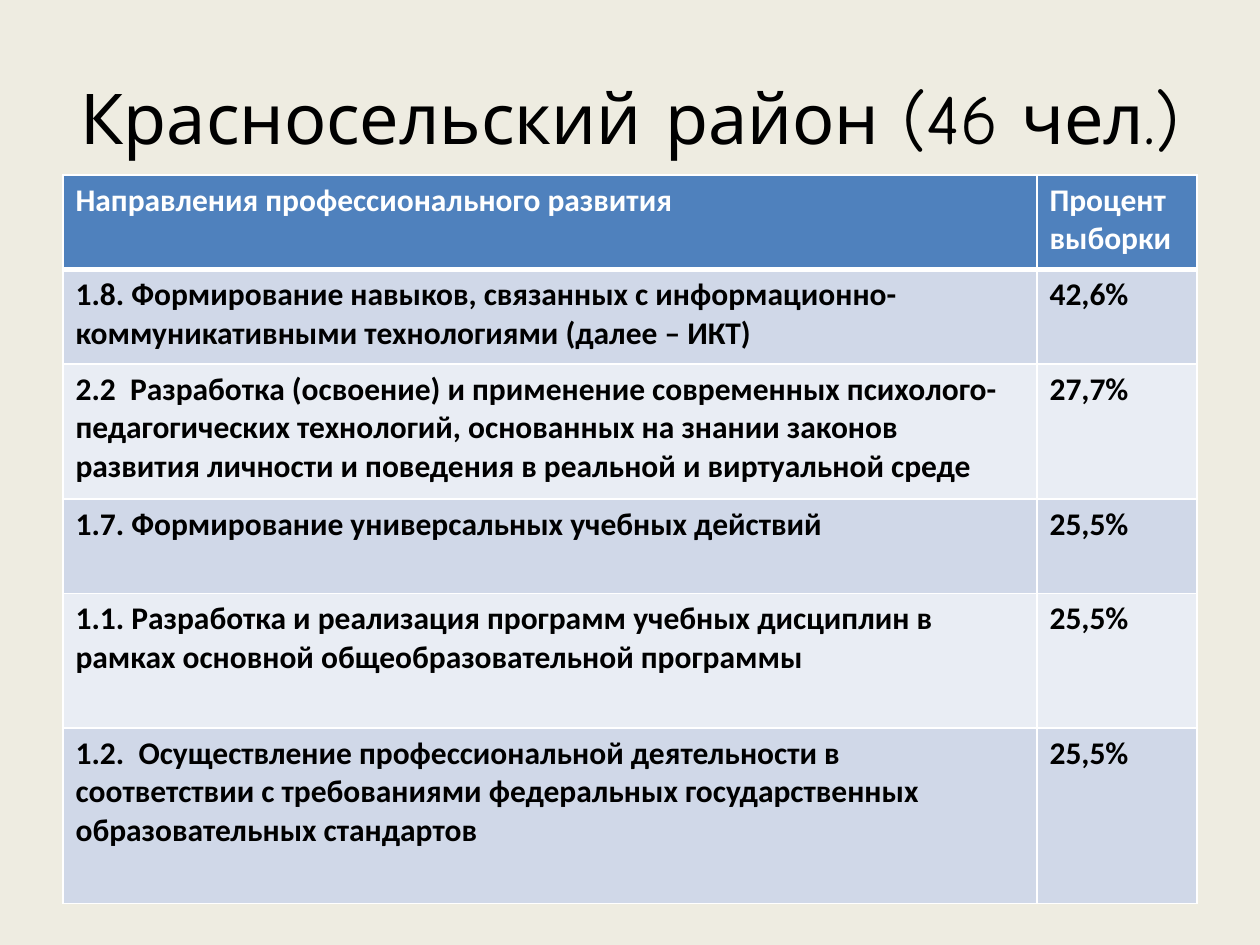
"""Build the slide on professional development priorities in one district."""
from dataclasses import dataclass

from lxml.etree import SubElement
from pptx import Presentation
from pptx.dml.color import RGBColor as Rgb
from pptx.enum.text import MSO_ANCHOR as Anchor, PP_ALIGN as Align
from pptx.oxml.ns import qn
from pptx.util import Emu, Inches, Pt

COLORS = {
    "page": "EEECE1", "ink": "000000", "white": "FFFFFF",
    "header": "4F81BD", "odd": "D0D8E8", "even": "E9EDF4",
}
WIDTH, HEIGHT = Inches(10), Inches(7.5)
MARGIN = 0.05
COLUMNS = (7.73, 1.27)
TITLE = "Красносельский район (46 чел.)"


@dataclass(frozen=True)
class Row:
    direction: str
    percent: str
    height: float


ROWS = (
    Row("Направления профессионального развития", "Процент выборки", 0.75),
    Row("1.8. Формирование навыков, связанных с информационно-"
        "коммуникативными технологиями (далее – ИКТ)", "42,6%", 0.75),
    Row("2.2  Разработка (освоение) и применение современных психолого-"
        "педагогических технологий, основанных на знании законов развития "
        "личности и поведения в реальной и виртуальной среде", "27,7%", 1.07),
    Row("1.7. Формирование универсальных учебных действий", "25,5%", 0.75),
    Row("1.1. Разработка и реализация программ учебных дисциплин в рамках "
        "основной общеобразовательной программы", "25,5%", 1.07),
    Row("1.2.  Осуществление профессиональной деятельности в соответствии "
        "с требованиями федеральных государственных образовательных "
        "стандартов", "25,5%", 1.39),
)


def color(name: str) -> Rgb:
    return Rgb.from_string(COLORS[name])


def add_span(para, text: str, face: str, size: float, ink: str, bold: bool) -> None:
    span = para.add_run()
    span.text = text
    span.font.name, span.font.size, span.font.bold = face, Pt(size), bold
    span.font.color.rgb = color(ink)


def add_border(cell, side: str, points: float) -> None:
    line = SubElement(cell._tc.get_or_add_tcPr(), qn(f"a:ln{side}"), w=str(Pt(points)))
    fill = SubElement(line, qn("a:solidFill"))
    SubElement(fill, qn("a:srgbClr"), val=COLORS["white"])


def fill_cell(cell, text: str, row_index: int) -> None:
    header = row_index == 0
    edges = {"L": 1, "R": 1, "T": 3 if row_index == 1 else 1, "B": 3 if header else 1}
    for side, points in edges.items():
        add_border(cell, side, points)
    band = "header" if header else ("even", "odd")[row_index % 2]
    cell.fill.solid()
    cell.fill.fore_color.rgb = color(band)
    add_span(cell.text_frame.paragraphs[0], text, "Calibri", 18,
             "white" if header else "ink", True)


def set_title(page) -> None:
    box = page.shapes.title
    box.left, box.top = Emu(int(WIDTH * MARGIN)), Emu(int(HEIGHT * 0.04))
    box.width, box.height = Emu(int(WIDTH * (1 - 2 * MARGIN))), Inches(1.25)
    box.text_frame.vertical_anchor = Anchor.MIDDLE
    para = box.text_frame.paragraphs[0]
    para.alignment = Align.CENTER
    add_span(para, TITLE, "Comic Neue", 40, "ink", False)


def add_priorities(page) -> None:
    table = page.shapes.add_table(
        len(ROWS), len(COLUMNS), Emu(int(WIDTH * MARGIN)), Inches(1.39),
        Inches(sum(COLUMNS)), Inches(sum(row.height for row in ROWS))).table
    for column, width in zip(table.columns, COLUMNS):
        column.width = Inches(width)
    for index, row in enumerate(ROWS):
        table.rows[index].height = Inches(row.height)
        for column, text in enumerate((row.direction, row.percent)):
            fill_cell(table.cell(index, column), text, index)


def main() -> None:
    deck = Presentation()
    deck.slide_width, deck.slide_height = WIDTH, HEIGHT
    page = deck.slides.add_slide(deck.slide_layouts.get_by_name("Title Only"))
    page.background.fill.solid()
    page.background.fill.fore_color.rgb = color("page")
    set_title(page)
    add_priorities(page)
    deck.save("out.pptx")


if __name__ == "__main__":
    main()
